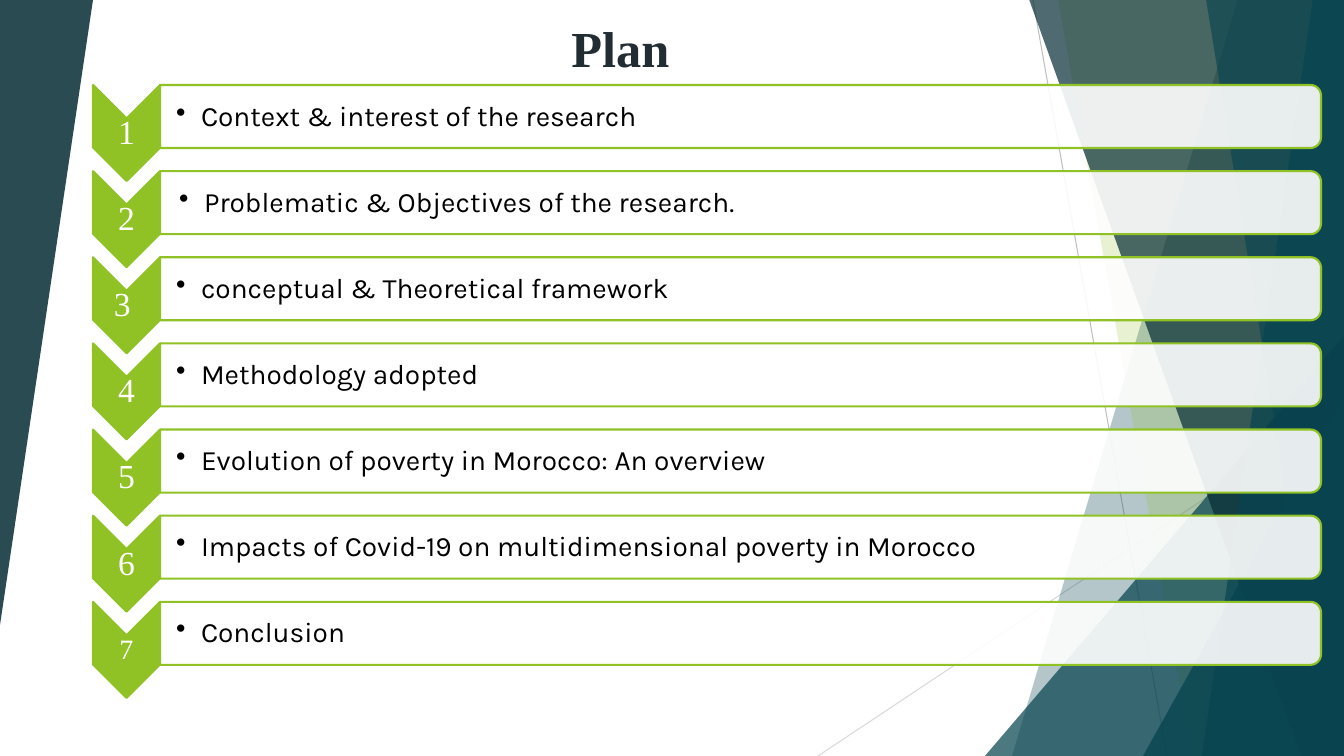
from dataclasses import dataclass

from lxml.etree import SubElement
from pptx import Presentation
from pptx.dml.color import RGBColor
from pptx.enum.shapes import MSO_CONNECTOR, MSO_SHAPE
from pptx.enum.text import MSO_ANCHOR, PP_ALIGN
from pptx.oxml.ns import qn
from pptx.util import Pt

SLIDE_WIDTH, SLIDE_HEIGHT = 1344, 756
SCALE = 12192000 / SLIDE_WIDTH


@dataclass(frozen=True)
class Theme:
    white: str = "FFFFFF"
    black: str = "000000"
    title: str = "212D32"
    green: str = "90C226"
    teal: str = "084450"
    dark_teal: str = "052C34"
    line_grey: str = "BFBFBF"
    light_grey: str = "D9D9D9"
    serif: str = "Times New Roman"
    sans: str = "Karla"
    title_size: int = 36
    number_size: int = 24
    item_size: int = 20
    outline: float = 1.5
    hairline: float = 0.75


THEME = Theme()

AGENDA = [
    "Context & interest of the research",
    "Problematic & Objectives of the research.",
    "conceptual & Theoretical framework",
    "Methodology adopted",
    "Evolution of poverty in Morocco: An overview",
    "Impacts of Covid-19 on multidimensional poverty in Morocco",
    "Conclusion",
]


def px(length):
    return round(length * SCALE)


def paint(shape, color, opacity=100, outline=None):
    shape.shadow.inherit = False
    shape.fill.solid()
    shape.fill.fore_color.rgb = RGBColor.from_string(color)
    if opacity < 100:
        color_element = shape.fill._xPr.find(qn("a:solidFill"))[0]
        SubElement(color_element, qn("a:alpha"), val=str(opacity * 1000))
    if outline:
        shape.line.color.rgb = RGBColor.from_string(outline)
        shape.line.width = Pt(THEME.outline)
    else:
        shape.line.fill.background()


def add_preset(slide, preset, box, color, rotation=0, adjustment=None, **paint_format):
    left, top, width, height = box
    if rotation == 90:
        left, top = left + (width - height) / 2, top + (height - width) / 2
        width, height = height, width
    shape = slide.shapes.add_shape(preset, px(left), px(top), px(width), px(height))
    shape.rotation = rotation
    if adjustment is not None:
        shape.adjustments[0] = adjustment
    paint(shape, color, **paint_format)


def add_polygon(slide, points, color, opacity):
    corners = [(px(x), px(y)) for x, y in points]
    builder = slide.shapes.build_freeform(*corners[0])
    builder.add_line_segments(corners[1:], close=True)
    paint(builder.convert_to_shape(), color, opacity)


def add_line(slide, start, end, color):
    connector = slide.shapes.add_connector(
        MSO_CONNECTOR.STRAIGHT, *map(px, start), *map(px, end)
    )
    connector.line.color.rgb = RGBColor.from_string(color)
    connector.line.width = Pt(THEME.hairline)
    SubElement(connector._element.spPr, qn("a:effectLst"))


def add_text(slide, text, box, *, font, size, color, bold=False, align=PP_ALIGN.LEFT,
             anchor=MSO_ANCHOR.MIDDLE, insets=(2, 2, 2, 2), spacing=None, bullet_indent=0):
    text_box = slide.shapes.add_textbox(*map(px, box))
    frame = text_box.text_frame
    frame.word_wrap = True
    frame.vertical_anchor = anchor
    frame.margin_left, frame.margin_top, frame.margin_right, frame.margin_bottom = map(px, insets)
    paragraph = frame.paragraphs[0]
    paragraph.alignment = align
    if spacing:
        paragraph.line_spacing = spacing
    if bullet_indent:
        properties = paragraph._p.get_or_add_pPr()
        properties.set("marL", str(px(bullet_indent)))
        properties.set("indent", str(-px(bullet_indent)))
        SubElement(properties, qn("a:buChar"), char="•")
    run = paragraph.add_run()
    run.text = text
    run.font.name = font
    run.font.size = Pt(size)
    run.font.bold = bold
    run.font.color.rgb = RGBColor.from_string(color)


def add_facet(slide, box, top_x, bottom_x, color, opacity):
    left, top, width, height = box
    right, bottom = left + width, top + height
    points = [(left + top_x, top), (right, top), (right, bottom), (left + bottom_x, bottom)]
    add_polygon(slide, points, color, opacity)


def add_corner_triangle(slide, box, color, opacity, rotation=0):
    add_preset(slide, MSO_SHAPE.ISOSCELES_TRIANGLE, box, color,
               rotation=rotation, adjustment=1, opacity=opacity)


def add_backdrop(slide, box):
    left, top, width, height = box
    right, bottom = left + width, top + height
    panel = (left + 984, top - 1, width - 984, height + 1)
    add_line(slide, (left + 1033, top), (left + 1167, bottom), THEME.line_grey)
    add_line(slide, (right, top + 406), (left + 818, bottom), THEME.light_grey)
    add_facet(slide, panel, 254, 28, THEME.teal, 30)
    add_facet(slide, panel, 74, 208, THEME.green, 20)
    add_corner_triangle(slide, (right - 359, bottom - 420, 359, 420), THEME.teal, 72)
    add_facet(slide, panel, 45, 317, THEME.dark_teal, 70)
    add_facet(slide, panel, 329, 218, THEME.teal, 70)
    add_facet(slide, panel, 222, 345, THEME.teal, 65)
    add_corner_triangle(slide, (right - 201, bottom - 360, 201, 360), THEME.teal, 80)
    add_corner_triangle(slide, (left, top, 93, 625), THEME.dark_teal, 85, rotation=180)


def add_title(slide, box):
    add_text(slide, "Plan", box, font=THEME.serif, size=THEME.title_size, color=THEME.title,
             bold=True, align=PP_ALIGN.CENTER, anchor=MSO_ANCHOR.TOP, insets=(12, 6, 12, 6))


def add_agenda_row(slide, box, number, item):
    left, top, width, height = box
    chevron_width, bar_height = 67, 63
    bar = (left + chevron_width, top, width - chevron_width, bar_height)
    is_second, is_last = number == 2, number == len(AGENDA)
    add_preset(slide, MSO_SHAPE.CHEVRON, (left, top, chevron_width, height), THEME.green,
               rotation=90, outline=THEME.green)
    add_text(slide, "3 " if number == 3 else str(number),
             (left, top + 34, chevron_width, 29), font=THEME.serif,
             size=THEME.item_size if is_last else THEME.number_size,
             color=THEME.white, align=PP_ALIGN.CENTER, spacing=0.9)
    add_preset(slide, MSO_SHAPE.ROUND_2_SAME_RECTANGLE, bar, THEME.white,
               rotation=90, opacity=90, outline=THEME.green)
    add_text(slide, item, (bar[0], top + 4, bar[2], 56), font=THEME.sans,
             size=THEME.item_size, color=THEME.black, spacing=0.9, bullet_indent=25,
             insets=(19 if is_second else 16, 2, 2, 2))


def add_agenda(slide, box):
    left, top, width, height = box
    pitch = height / len(AGENDA)
    for index, item in enumerate(AGENDA):
        add_agenda_row(slide, (left, top + index * pitch, width, 96), index + 1, item)


def main():
    presentation = Presentation()
    presentation.slide_width = px(SLIDE_WIDTH)
    presentation.slide_height = px(SLIDE_HEIGHT)
    slide = presentation.slides.add_slide(presentation.slide_layouts[6])
    add_backdrop(slide, (0, 0, SLIDE_WIDTH, SLIDE_HEIGHT))
    add_title(slide, (49, 11, 1143, 73))
    add_agenda(slide, (93, 85, 1228, 603))
    presentation.save("out.pptx")


if __name__ == "__main__":
    main()
